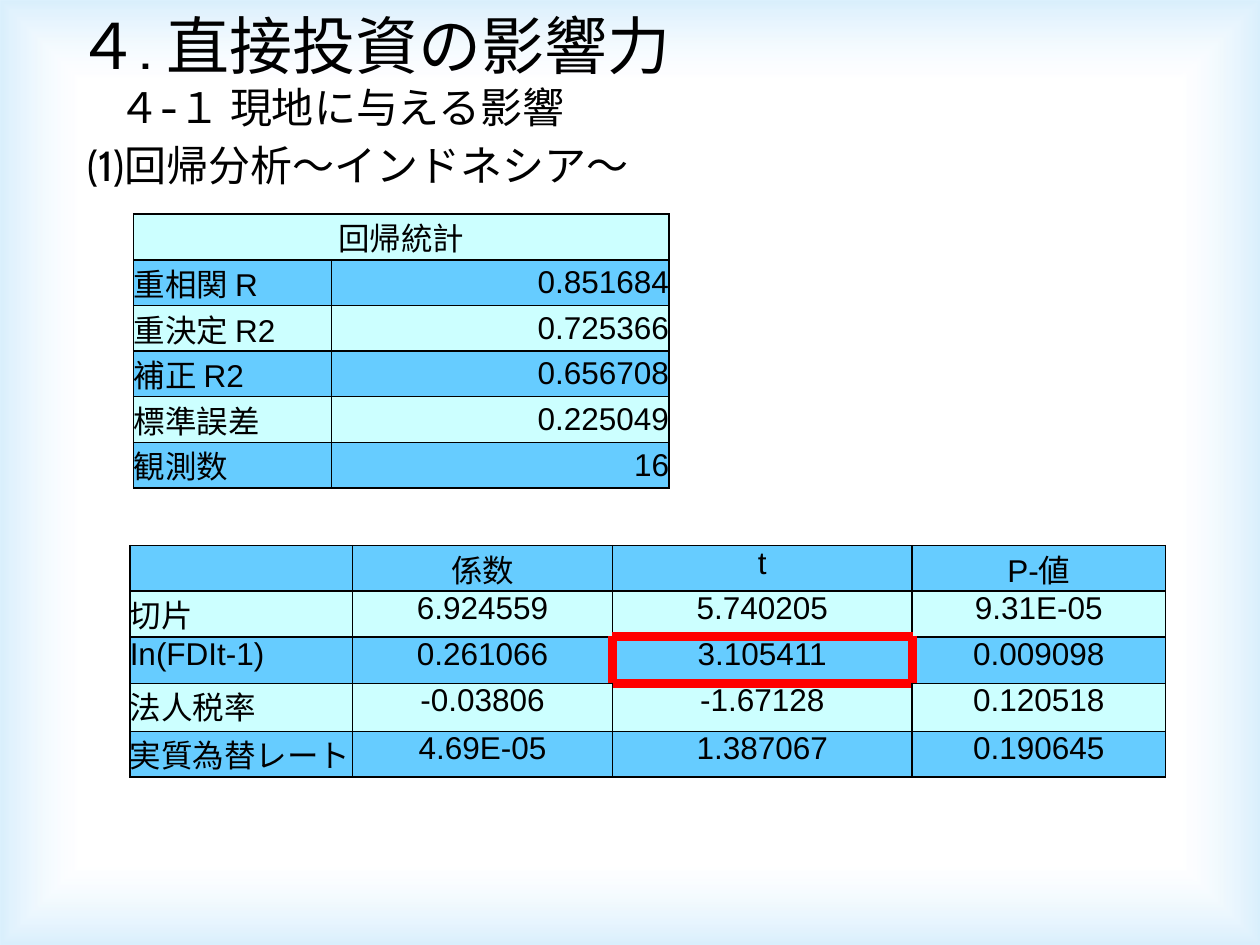
import pptx
import pptx.util
import pptx.oxml
import pptx.oxml.ns
import pptx.dml.color
import pptx.enum.shapes
import pptx.enum.text

HEADING = [
    [("４. 直接投資の影響力", 36)],
    [("\u3000４-１ 現地に与える影響", 24)],
    [(" ", 28), ("(1)回帰分析～インドネシア～", 24)],
]
STATISTICS = [
    [["回帰統計"], []],
    [["重相関 ", "R"], ["0.851684"]],
    [["重決定 ", "R2"], ["0.725366"]],
    [["補正 ", "R2"], ["0.656708"]],
    [["標準誤差"], ["0.225049"]],
    [["観測数"], ["16"]],
]
COEFFICIENTS = [
    [[], ["係数"], ["t"], ["P-値"]],
    [["切片"], ["6.924559"], ["5.740205"], ["9.31E-05"]],
    [["In(FDIt-1)"], ["0.261066"], ["3.105411"], ["0.009098"]],
    [["法人税率"], ["-0.03806"], ["-1.67128"], ["0.120518"]],
    [["実質為替レート"], ["4.69E-05"], ["1.387067"], ["0.190645"]],
]
THEME = {
    "heading": "Cabin", "latin": "Arial", "japanese": "Noto Sans CJK JP",
    "text": "000000", "pale": "CCFFFF", "blue": "66CCFF", "accent": "FF0000",
    "glow": "5BBAF6", "cell_size": 18, "rule": 1, "accent_rule": 6,
}
LEFT, CENTER, RIGHT = (pptx.enum.text.PP_ALIGN.LEFT, pptx.enum.text.PP_ALIGN.CENTER,
                       pptx.enum.text.PP_ALIGN.RIGHT)
EDGES = [("lnL", 0, -1), ("lnR", 0, 1), ("lnT", -1, 0), ("lnB", 1, 0)]
NS = pptx.oxml.ns.nsdecls("a")
Inches = pptx.util.Inches


def style_run(run, face, size):
    run.font.name = face
    run.font.size = pptx.util.Pt(size)
    run.font.color.rgb = pptx.dml.color.RGBColor.from_string(THEME["text"])
    run.font._element.get_or_add_latin().addnext(
        pptx.oxml.parse_xml(f'<a:ea {NS} typeface="{THEME["japanese"]}"/>'))


def add_glow(slide, width, height):
    glow = slide.shapes.add_shape(pptx.enum.shapes.MSO_SHAPE.RECTANGLE, 0, 0, width, height)
    glow.shadow.inherit = False
    glow.line.fill.background()
    glow.fill.background()
    stops = "".join(
        f'<a:gs pos="{pos}000"><a:srgbClr val="{color}"><a:alpha val="{alpha}000"/></a:srgbClr></a:gs>'
        for pos, color, alpha in [(83, "FFFFFF", 11), (100, THEME["glow"], 23)])
    gradient = pptx.oxml.parse_xml(
        f'<a:gradFill {NS} rotWithShape="1"><a:gsLst>{stops}</a:gsLst><a:path path="rect">'
        '<a:fillToRect l="50000" t="50000" r="50000" b="50000"/></a:path></a:gradFill>')
    properties = glow._element.spPr
    properties.replace(properties.find(pptx.oxml.ns.qn("a:noFill")), gradient)
    slide.shapes._spTree.insert(2, glow._element)


def add_heading(slide):
    heading = slide.shapes.title
    heading.left, heading.top, heading.width, heading.height = map(Inches, (0.51, 0, 6.38, 1.58))
    frame = heading.text_frame
    frame.word_wrap = True
    frame.auto_size = pptx.enum.text.MSO_AUTO_SIZE.NONE
    frame.vertical_anchor = pptx.enum.text.MSO_ANCHOR.TOP
    for index, pieces in enumerate(HEADING):
        paragraph = frame.add_paragraph() if index else frame.paragraphs[0]
        paragraph.alignment = LEFT
        for words, size in pieces:
            run = paragraph.add_run()
            run.text = words
            style_run(run, THEME["heading"], size)


def set_borders(cell, row, column, highlight):
    properties = cell._tc.get_or_add_tcPr()
    for index, (edge, down, across) in enumerate(EDGES):
        marked = highlight in [(row, column), (row + down, column + across)]
        color = THEME["accent" if marked else "text"]
        weight = pptx.util.Pt(THEME["accent_rule" if marked else "rule"])
        properties.insert(index, pptx.oxml.parse_xml(
            f'<a:{edge} {NS} w="{weight}"><a:solidFill><a:srgbClr val="{color}"/>'
            f'</a:solidFill></a:{edge}>'))


def add_grid(slide, rows, left, top, widths, heights, fills, align, anchor, highlight=None):
    table = slide.shapes.add_table(
        len(rows), len(widths), Inches(left), Inches(top),
        Inches(sum(widths)), Inches(sum(heights))).table
    for column, width in zip(table.columns, widths):
        column.width = Inches(width)
    for line, height in zip(table.rows, heights):
        line.height = Inches(height)
    for r, entries in enumerate(rows):
        for c, pieces in enumerate(entries):
            cell = table.cell(r, c)
            cell.margin_left = cell.margin_right = cell.margin_top = cell.margin_bottom = 0
            cell.vertical_anchor = anchor
            cell.fill.solid()
            cell.fill.fore_color.rgb = pptx.dml.color.RGBColor.from_string(THEME[fills[r % 2]])
            set_borders(cell, r, c, highlight)
            paragraph = cell.text_frame.paragraphs[0]
            paragraph.alignment = CENTER if r == 0 else align if c else LEFT
            for words in pieces:
                run = paragraph.add_run()
                run.text = words
                japanese = c == 0 and not words.isascii()
                style_run(run, THEME["japanese" if japanese else "latin"], THEME["cell_size"])
    return table


def main():
    deck = pptx.Presentation()
    deck.slide_width, deck.slide_height = Inches(10), Inches(7.5)
    slide = deck.slides.add_slide(deck.slide_layouts[5])
    add_glow(slide, deck.slide_width, deck.slide_height)
    add_heading(slide)
    statistics = add_grid(
        slide, STATISTICS, 1.06, 1.7, [1.57, 2.68], [0.33, 0.35] + [0.36] * 4,
        ("pale", "blue"), RIGHT, pptx.enum.text.MSO_ANCHOR.MIDDLE)
    statistics.cell(0, 0).merge(statistics.cell(0, 1))
    add_grid(
        slide, COEFFICIENTS, 1.03, 4.33, [1.77, 2.06, 2.38, 2.01], [0.33, 0.33, 0.37, 0.38, 0.3],
        ("blue", "pale"), CENTER, pptx.enum.text.MSO_ANCHOR.TOP, highlight=(2, 2))
    deck.save("out.pptx")


if __name__ == "__main__":
    main()
